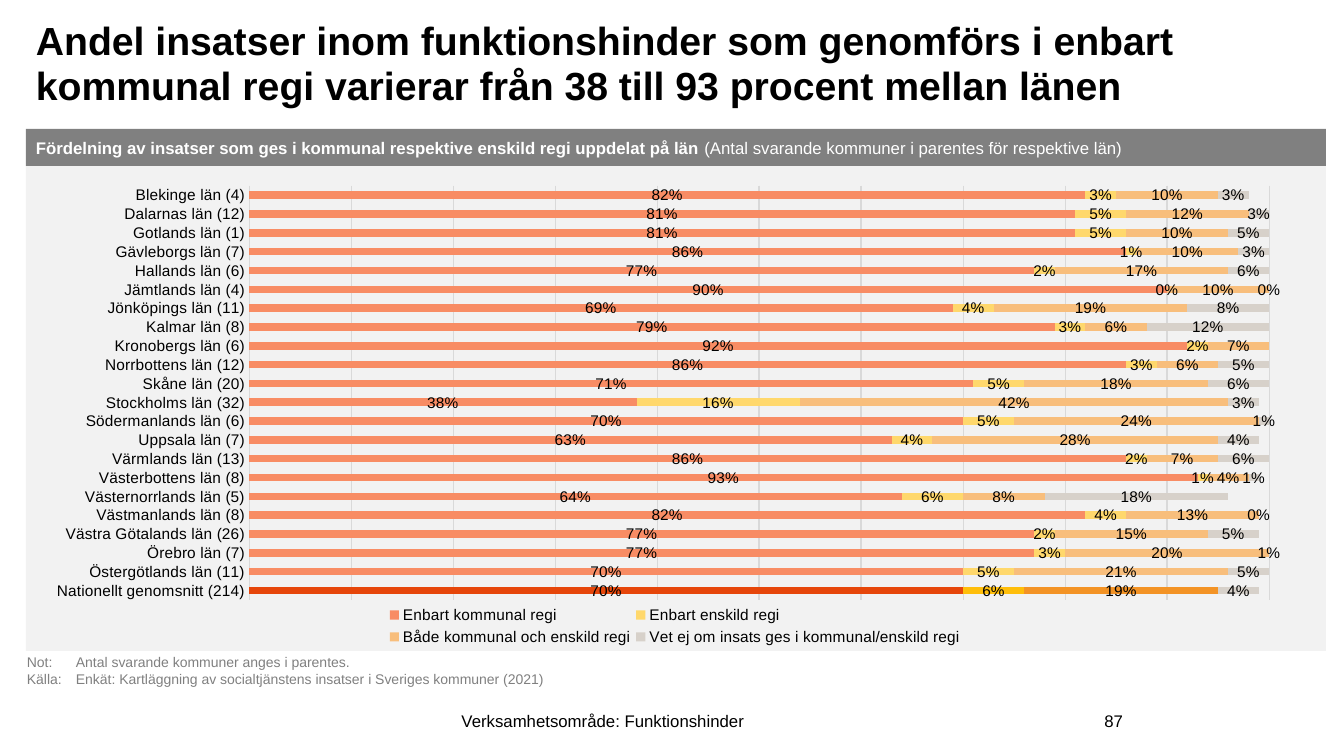
from lxml import etree
from pptx import Presentation
from pptx.chart.data import CategoryChartData
from pptx.dml.color import RGBColor
from pptx.enum.chart import (
    XL_CHART_TYPE as ChartType,
    XL_LABEL_POSITION as LabelPosition,
    XL_LEGEND_POSITION as LegendPosition,
    XL_TICK_MARK as TickMark,
)
from pptx.enum.shapes import MSO_SHAPE as Shape
from pptx.enum.text import MSO_ANCHOR as Anchor, PP_ALIGN as Align
from pptx.oxml.ns import qn
from pptx.util import Emu, Pt

SCALE = 914400 / 100.8
FONT = "Arial"
COLORS = {
    "text": "000000",
    "white": "FFFFFF",
    "panel": "F2F2F2",
    "gray": "808080",
    "grid": "D9D9D9",
}
SERIES = [
    ("Enbart kommunal regi", "F88C64", "E6460A"),
    ("Enbart enskild regi", "FFD86C", "FFBE0A"),
    ("Både kommunal och enskild regi", "F8BE7C", "F39325"),
    ("Vet ej om insats ges i kommunal/enskild regi", "D7D1CA", None),
]
COUNTIES = [
    ("Blekinge län (4)", 82, 3, 10, 3),
    ("Dalarnas län (12)", 81, 5, 12, 3),
    ("Gotlands län (1)", 81, 5, 10, 5),
    ("Gävleborgs län (7)", 86, 1, 10, 3),
    ("Hallands län (6)", 77, 2, 17, 6),
    ("Jämtlands län (4)", 90, 0, 10, 0),
    ("Jönköpings län (11)", 69, 4, 19, 8),
    ("Kalmar län (8)", 79, 3, 6, 12),
    ("Kronobergs län (6)", 92, 2, 7, None),
    ("Norrbottens län (12)", 86, 3, 6, 5),
    ("Skåne län (20)", 71, 5, 18, 6),
    ("Stockholms län (32)", 38, 16, 42, 3),
    ("Södermanlands län (6)", 70, 5, 24, 1),
    ("Uppsala län (7)", 63, 4, 28, 4),
    ("Värmlands län (13)", 86, 2, 7, 6),
    ("Västerbottens län (8)", 93, 1, 4, 1),
    ("Västernorrlands län (5)", 64, 6, 8, 18),
    ("Västmanlands län (8)", 82, 4, 13, 0),
    ("Västra Götalands län (26)", 77, 2, 15, 5),
    ("Örebro län (7)", 77, 3, 20, 1),
    ("Östergötlands län (11)", 70, 5, 21, 5),
    ("Nationellt genomsnitt (214)", 70, 6, 19, 4),
]


def px(length):
    """Turn pixels into EMU."""
    return Emu(round(length * SCALE))


def color(name):
    """Look up a named colour, or read a hex string."""
    return RGBColor.from_string(COLORS.get(name, name))


def style(font, size, tone="text", bold=False):
    """Set face, size, colour and weight of a font."""
    font.name, font.size, font.bold = FONT, Pt(size), bold
    font.color.rgb = color(tone)


def add_text(page, box, lines, size, tone="text", bold=False,
             align=Align.LEFT, anchor=Anchor.TOP, spacing=None, tab=None):
    """Add a text box with one paragraph per line."""
    frame = page.shapes.add_textbox(*map(px, box)).text_frame
    frame.word_wrap = True
    frame.vertical_anchor = anchor
    for number, line in enumerate(lines):
        para = frame.add_paragraph() if number else frame.paragraphs[0]
        para.text = line
        para.alignment = align
        if spacing:
            para.line_spacing = spacing
        if tab:
            stops = etree.SubElement(para._p.get_or_add_pPr(), qn("a:tabLst"))
            etree.SubElement(stops, qn("a:tab"), pos=str(px(tab)), algn="l")
        style(para.font, size, tone, bold)


def add_bar(page, box, fill):
    """Add a plain filled rectangle."""
    bar = page.shapes.add_shape(Shape.RECTANGLE, *map(px, box))
    bar.shadow.inherit = False
    bar.fill.solid()
    bar.fill.fore_color.rgb = color(fill)
    bar.line.fill.background()
    return bar


def add_panel(page, box, header_height):
    """Add the gray panel with its heading strip and chart."""
    left, top, width, height = box
    body_top = top + header_height
    add_bar(page, (left, body_top, width, height - header_height), "panel")
    frame = add_bar(page, (left, top, width, header_height), "gray").text_frame
    frame.word_wrap = True
    frame.vertical_anchor = Anchor.MIDDLE
    para = frame.paragraphs[0]
    para.alignment = Align.LEFT
    heading = (
        ("Fördelning av insatser som ges i kommunal respektive enskild regi uppdelat på län ", True),
        ("(Antal svarande kommuner i parentes för respektive län)", False),
    )
    for words, bold in heading:
        span = para.add_run()
        span.text = words
        style(span.font, 12, "white", bold)
    add_county_chart(page, (left + 17, body_top + 4, width - 36, height - header_height - 5))


def set_layout(parent, index, fractions, inner=False):
    """Give a chart part a fixed place as fractions of the chart."""
    for old in parent.findall(qn("c:layout")):
        parent.remove(old)
    layout = etree.Element(qn("c:layout"))
    manual = etree.SubElement(layout, qn("c:manualLayout"))
    settings = [("layoutTarget", "inner")] if inner else []
    settings += [("xMode", "edge"), ("yMode", "edge"), *zip("xywh", fractions)]
    for tag, value in settings:
        etree.SubElement(manual, qn(f"c:{tag}"), val=str(value))
    parent.insert(index, layout)


def add_county_chart(page, box):
    """Add the stacked bars of all counties."""
    data = CategoryChartData(number_format="0%")
    names, *columns = zip(*COUNTIES)
    data.categories = names
    for (name, *_), column in zip(SERIES, columns):
        data.add_series(name, [None if share is None else share / 100 for share in column])
    chart = page.shapes.add_chart(ChartType.BAR_STACKED, *map(px, box), data).chart
    chart.has_title = False
    style(chart.font, 11)

    plot = chart.plots[0]
    plot.gap_width, plot.overlap, plot.vary_by_categories = 150, 100, False
    for series, (_, tone, total_tone) in zip(plot.series, SERIES):
        series.format.fill.solid()
        series.format.fill.fore_color.rgb = color(tone)
        if total_tone:
            total = series.points[len(COUNTIES) - 1].format.fill
            total.solid()
            total.fore_color.rgb = color(total_tone)
        labels = series.data_labels
        labels.show_value = True
        labels.position = LabelPosition.CENTER
        labels.number_format, labels.number_format_is_linked = "0%", False
        style(labels.font, 11)

    counties, shares = chart.category_axis, chart.value_axis
    counties.reverse_order = True
    counties.major_tick_mark = TickMark.NONE
    style(counties.tick_labels.font, 11)
    shares.minimum_scale, shares.maximum_scale, shares.major_unit = 0, 1, 0.1
    shares.has_major_gridlines = True
    shares.visible = False
    for line in (counties.format.line, shares.major_gridlines.format.line):
        line.color.rgb = color("grid")
        line.width = Pt(0.75)

    chart.has_legend = True
    legend = chart.legend
    legend.position = LegendPosition.BOTTOM
    legend.include_in_layout = False
    style(legend.font, 11)
    set_layout(legend._element, 1, (0.27, 0.9, 0.46, 0.1))
    plot_area = chart._chartSpace.find(f".//{qn('c:plotArea')}")
    set_layout(plot_area, 0, (0.163, 0.033, 0.807, 0.863), inner=True)


def add_footer(page, box):
    """Add the section name and the page number."""
    left, top, width, height = box
    add_text(page, (left, top, 664, height), ["Verksamhetsområde: Funktionshinder"], 12,
             align=Align.CENTER, anchor=Anchor.MIDDLE)
    add_text(page, (left + width - 140, top, 140, height), ["87"], 12,
             align=Align.RIGHT, anchor=Anchor.MIDDLE)


def main():
    """Build the slide and save it."""
    deck = Presentation()
    deck.slide_width, deck.slide_height = px(1344), px(756)
    page = deck.slides.add_slide(deck.slide_layouts[6])
    title = ("Andel insatser inom funktionshinder som genomförs i enbart "
             "kommunal regi varierar från 38 till 93 procent mellan länen")
    add_text(page, (26, 15, 1245, 115), [title], 28, bold=True, spacing=0.95)
    add_panel(page, (26, 129, 1300, 522), 37)
    notes = ["Not:\tAntal svarande kommuner anges i parentes.",
             "Källa:\tEnkät: Kartläggning av socialtjänstens insatser i Sveriges kommuner (2021)"]
    add_text(page, (17, 649, 1274, 45), notes, 10, "gray", tab=49)
    add_footer(page, (271, 701, 862, 40))
    deck.save("out.pptx")


if __name__ == "__main__":
    main()
